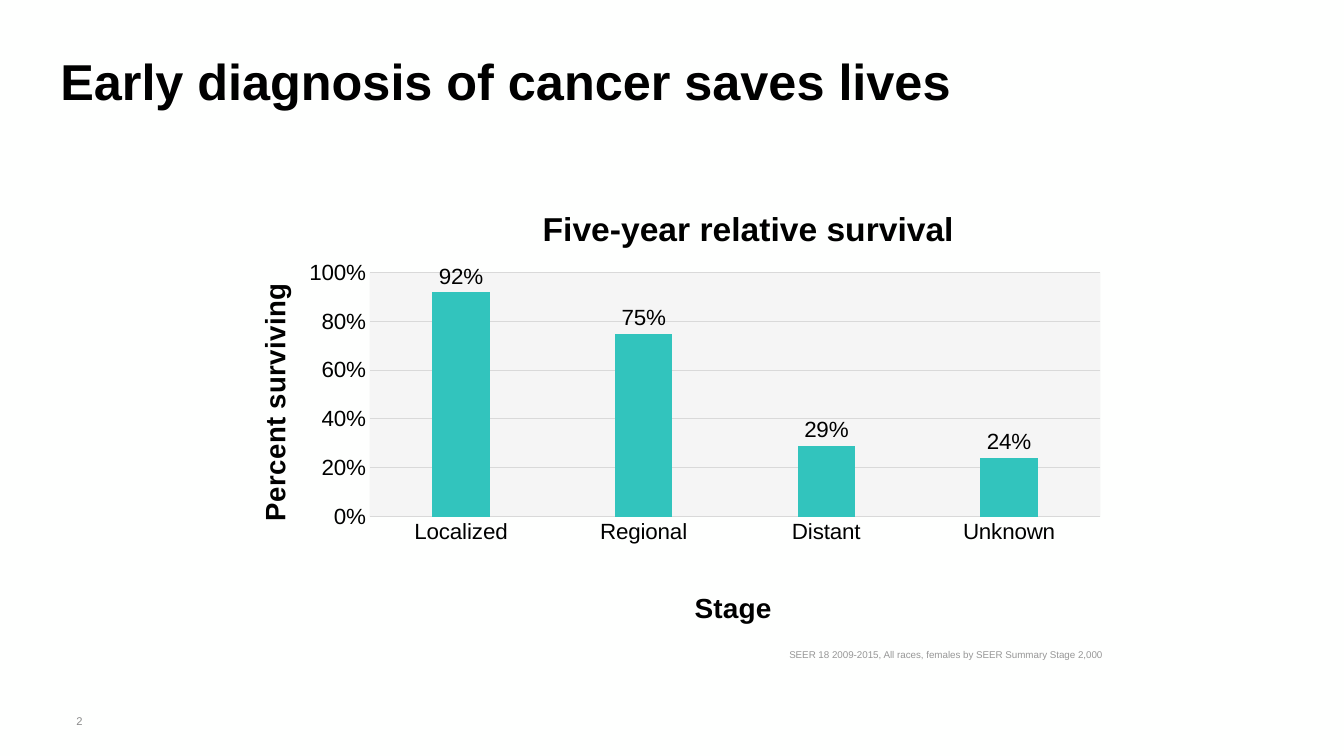
import pptx
import pptx.chart.data
import pptx.dml.color
import pptx.enum.chart
import pptx.enum.text
import pptx.oxml
import pptx.oxml.ns
import pptx.util

PX = 9144
FONT = "Arial"
COLORS = {
    "background": "FEFFFE",
    "text": "000000",
    "page": "8C8C8C",
    "source": "979797",
    "grid": "D9D9D9",
    "plot": "F5F5F5",
    "bar": "32C4BD",
}
SURVIVAL = {"Localized": 0.92, "Regional": 0.75, "Distant": 0.29, "Unknown": 0.24}
NS = pptx.oxml.ns.nsdecls("c", "a")
qn = pptx.oxml.ns.qn


def rgb(name):
    return pptx.dml.color.RGBColor.from_string(COLORS[name])


def style_font(font, size, color="text", bold=False):
    font.name = FONT
    font.size = pptx.util.Pt(size)
    font.bold = bold
    font.color.rgb = rgb(color)


def write_text(tf, text, size, color="text", bold=False, align=None, spacing=None):
    p = tf.paragraphs[0]
    p.alignment = align
    p.line_spacing = spacing
    r = p.add_run()
    r.text = text
    style_font(r.font, size, color, bold)


def add_text(slide, box, text, size, wrap=True, middle=True, **text_format):
    sp = slide.shapes.add_textbox(*(v * PX for v in box))
    tf = sp.text_frame
    tf.word_wrap = wrap
    if middle:
        tf.vertical_anchor = pptx.enum.text.MSO_ANCHOR.MIDDLE
    write_text(tf, text, size, **text_format)


def place(element, **fractions):
    for old in element.findall(qn("c:layout")):
        element.remove(old)
    target = '<c:layoutTarget val="inner"/>' if "w" in fractions else ""
    modes = "".join(f'<c:{key}Mode val="edge"/>' for key in ("x", "y"))
    values = "".join(f'<c:{key} val="{value:.3f}"/>' for key, value in fractions.items())
    layout = pptx.oxml.parse_xml(
        f"<c:layout {NS}><c:manualLayout>{target}{modes}{values}</c:manualLayout></c:layout>"
    )
    element.insert(0 if element.find(qn("c:tx")) is None else 1, layout)


def fill_plot(plot_area):
    plot_area.append(pptx.oxml.parse_xml(
        f'<c:spPr {NS}><a:solidFill><a:srgbClr val="{COLORS["plot"]}"/></a:solidFill>'
        "<a:ln><a:noFill/></a:ln></c:spPr>"
    ))


def style_line(line):
    line.color.rgb = rgb("grid")
    line.width = pptx.util.Pt(0.75)


def add_chart_title(title, text, size, box, left, top):
    write_text(title.text_frame, text, size, bold=True)
    place(title.element, x=left / box[2], y=top / box[3])


def style_axes(chart, box):
    category, value = chart.category_axis, chart.value_axis
    for axis in (category, value):
        axis.major_tick_mark = pptx.enum.chart.XL_TICK_MARK.NONE
        axis.minor_tick_mark = pptx.enum.chart.XL_TICK_MARK.NONE
        style_font(axis.tick_labels.font, 16)
    category.has_major_gridlines = False
    style_line(category.format.line)
    value.minimum_scale, value.maximum_scale, value.major_unit = 0, 1, 0.2
    value.format.line.fill.background()
    style_line(value.major_gridlines.format.line)
    value.tick_labels.number_format = "0%"
    value.tick_labels.number_format_is_linked = False
    add_chart_title(category.axis_title, "Stage", 20, box, 460, 406)
    add_chart_title(value.axis_title, "Percent surviving", 20, box, 26, 100)
    for body in value.axis_title.element.iter(qn("a:bodyPr")):
        body.set("rot", "-5400000")
        body.set("vert", "horz")


def style_bars(plot):
    plot.gap_width = 219
    plot.overlap = -27
    plot.vary_by_categories = False
    series = plot.series[0]
    series.format.fill.solid()
    series.format.fill.fore_color.rgb = rgb("bar")
    labels = series.data_labels
    labels.show_value = True
    labels.number_format = "0%"
    labels.number_format_is_linked = False
    labels.position = pptx.enum.chart.XL_LABEL_POSITION.OUTSIDE_END
    style_font(labels.font, 16)


def add_survival_chart(slide, box):
    data = pptx.chart.data.CategoryChartData(number_format="0%")
    data.categories = SURVIVAL.keys()
    data.add_series("Series 1", SURVIVAL.values())
    chart = slide.shapes.add_chart(
        pptx.enum.chart.XL_CHART_TYPE.COLUMN_CLUSTERED, *(v * PX for v in box), data
    ).chart
    style_font(chart.font, 16)
    chart.has_legend = False
    chart.has_title = True
    add_chart_title(chart.chart_title, "Five-year relative survival", 24, box, 308, 18)
    style_axes(chart, box)
    style_bars(chart.plots[0])
    plot_area = next(chart.element.iter(qn("c:plotArea")))
    place(plot_area, x=143 / box[2], y=90 / box[3], w=725 / box[2], h=246 / box[3])
    fill_plot(plot_area)


def build_slide(prs, box):
    left, top, width, height = box
    slide = prs.slides.add_slide(prs.slide_layouts[6])
    slide.background.fill.solid()
    slide.background.fill.fore_color.rgb = rgb("background")
    add_text(slide, (left + 52, top + height - 55, 54, 40), "2", 8, color="page",
             align=pptx.enum.text.PP_ALIGN.CENTER)
    add_text(slide, (left + 773, top + 639, 336, 22),
             "SEER 18 2009-2015, All races, females by SEER Summary Stage 2,000", 7,
             wrap=False, middle=False, color="source")
    add_survival_chart(slide, (left + 224, top + 182, 886, 446))
    add_text(slide, (left + 50, top + 52, width - 100, 63),
             "Early diagnosis of cancer saves lives", 36, bold=True, spacing=0.9)


def main():
    prs = pptx.Presentation()
    prs.slide_width, prs.slide_height = 1333 * PX, 750 * PX
    build_slide(prs, (0, 0, 1333, 750))
    prs.save("out.pptx")


if __name__ == "__main__":
    main()
